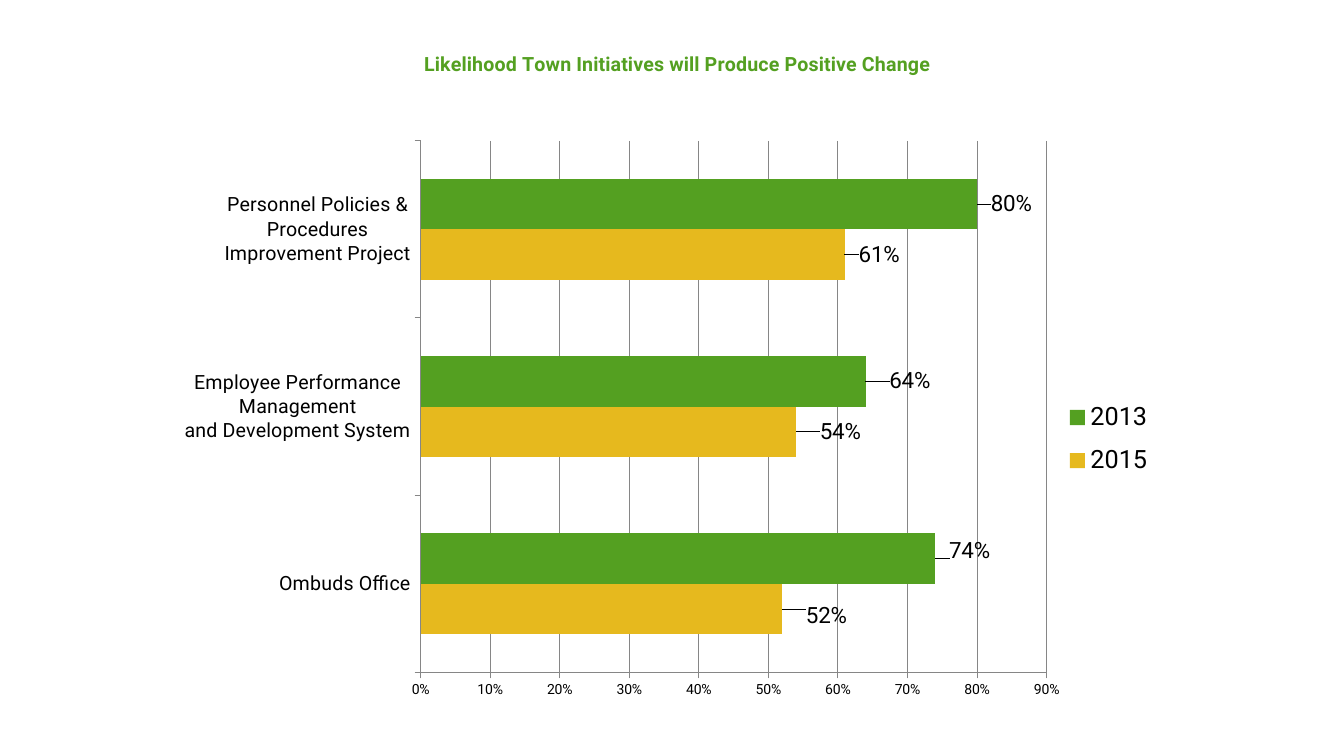
from lxml.etree import SubElement
from pptx import Presentation
from pptx.chart.data import CategoryChartData
from pptx.dml.color import RGBColor
from pptx.enum.chart import XL_CHART_TYPE, XL_LABEL_POSITION, XL_LEGEND_POSITION, XL_TICK_MARK
from pptx.oxml.ns import qn
from pptx.util import Inches, Pt

GREEN = RGBColor(0x54, 0xA0, 0x21)
GOLD = RGBColor(0xE6, 0xB9, 0x1E)
GREY = RGBColor(0x86, 0x86, 0x86)
BLACK = RGBColor(0, 0, 0)
FONT = "Roboto"

INITIATIVES = [
    "Ombuds Office",
    "Employee Performance Management\nand Development System",
    "Personnel Policies & Procedures\nImprovement Project",
]
SURVEYS = [
    ("2015", GOLD, (0.52, 0.54, 0.61)),
    ("2013", GREEN, (0.74, 0.64, 0.8)),
]
LABEL_SHIFTS = [(0.02, 0.01), (0.02, 0), (0.01, 0), (0.01, -0.01), (0.02, 0), (0.01, 0)]


def set_font(font, size, color=BLACK, bold=False):
    """Apply the slide's typeface with a size, colour and weight."""
    font.name = FONT
    font.size = Pt(size)
    font.bold = bold
    font.color.rgb = color


def set_layout(part, index, **settings):
    """Give a chart part a manual layout as its child at index."""
    for old_layout in part.findall(qn("c:layout")):
        part.remove(old_layout)
    layout = SubElement(part, qn("c:layout"))
    manual = SubElement(layout, qn("c:manualLayout"))
    for tag, value in settings.items():
        SubElement(manual, qn(f"c:{tag}")).set("val", str(value))
    part.insert(index, layout)


def format_axes(chart):
    """Style the initiative axis and the percentage axis."""
    for axis, size in ((chart.category_axis, 14), (chart.value_axis, 10)):
        set_font(axis.tick_labels.font, size)
        axis.major_tick_mark = XL_TICK_MARK.OUTSIDE
        axis.minor_tick_mark = XL_TICK_MARK.NONE
        axis.format.line.color.rgb = GREY
    percentages = chart.value_axis
    percentages.minimum_scale = 0
    percentages.maximum_scale = 0.9
    percentages.major_unit = 0.1
    percentages.has_major_gridlines = True
    percentages.major_gridlines.format.line.color.rgb = GREY
    percentages.tick_labels.number_format = "0%"
    percentages.tick_labels.number_format_is_linked = False


def format_bars(chart):
    """Colour the bars and place their value labels."""
    bars = chart.plots[0]
    bars.gap_width = 150
    bars.overlap = 0
    bars.vary_by_categories = False
    for survey, (_, color, values) in zip(bars.series, SURVEYS):
        survey.format.fill.solid()
        survey.format.fill.fore_color.rgb = color
        labels = survey.data_labels
        labels.show_value = True
        labels.number_format = "0%"
        labels.number_format_is_linked = False
        set_font(labels.font, 16)
        for point_index in range(len(values)):
            label = survey.points[point_index].data_label
            set_font(label.font, 16)
            label.position = XL_LABEL_POSITION.OUTSIDE_END
    for label, (x, y) in zip(chart.element.xpath(".//c:dLbl"), LABEL_SHIFTS):
        set_layout(label, 1, x=x, y=y)


def format_title_and_legend(chart):
    """Write the chart title and place the title, legend and plot."""
    chart.has_title = True
    heading = chart.chart_title.text_frame.paragraphs[0]
    heading.text = "Likelihood Town Initiatives will Produce Positive Change"
    set_font(heading.font, 14, GREEN, True)
    chart.has_legend = True
    chart.legend.position = XL_LEGEND_POSITION.RIGHT
    chart.legend.include_in_layout = False
    set_font(chart.legend.font, 18)
    title, = chart.element.xpath("c:chart/c:title")
    legend, = chart.element.xpath("c:chart/c:legend")
    plot_area, = chart.element.xpath("c:chart/c:plotArea")
    set_layout(title, 1, xMode="edge", yMode="edge", x=0.24, y=0.03)
    set_layout(legend, 1, xMode="edge", yMode="edge", x=0.89, y=0.51, w=0.1, h=0.14)
    set_layout(plot_area, 0, layoutTarget="inner", xMode="edge", yMode="edge",
               x=0.24, y=0.162, w=0.637, h=0.745)


def add_initiative_chart(slide, left, top, width, height):
    """Add the clustered bar chart of both surveys in the given box."""
    data = CategoryChartData(number_format="0%")
    data.categories = INITIATIVES
    for year, _, values in SURVEYS:
        data.add_series(year, values)
    chart = slide.shapes.add_chart(
        XL_CHART_TYPE.BAR_CLUSTERED, left, top, width, height, data).chart
    set_font(chart.font, 10)
    format_axes(chart)
    format_bars(chart)
    format_title_and_legend(chart)


def main():
    """Build the slide and save it."""
    presentation = Presentation()
    presentation.slide_width = Inches(13.33)
    presentation.slide_height = Inches(7.5)
    slide = presentation.slides.add_slide(presentation.slide_layouts[6])
    add_initiative_chart(slide, Inches(1.83), Inches(0.25), Inches(9.75), Inches(7.08))
    presentation.save("out.pptx")


if __name__ == "__main__":
    main()
